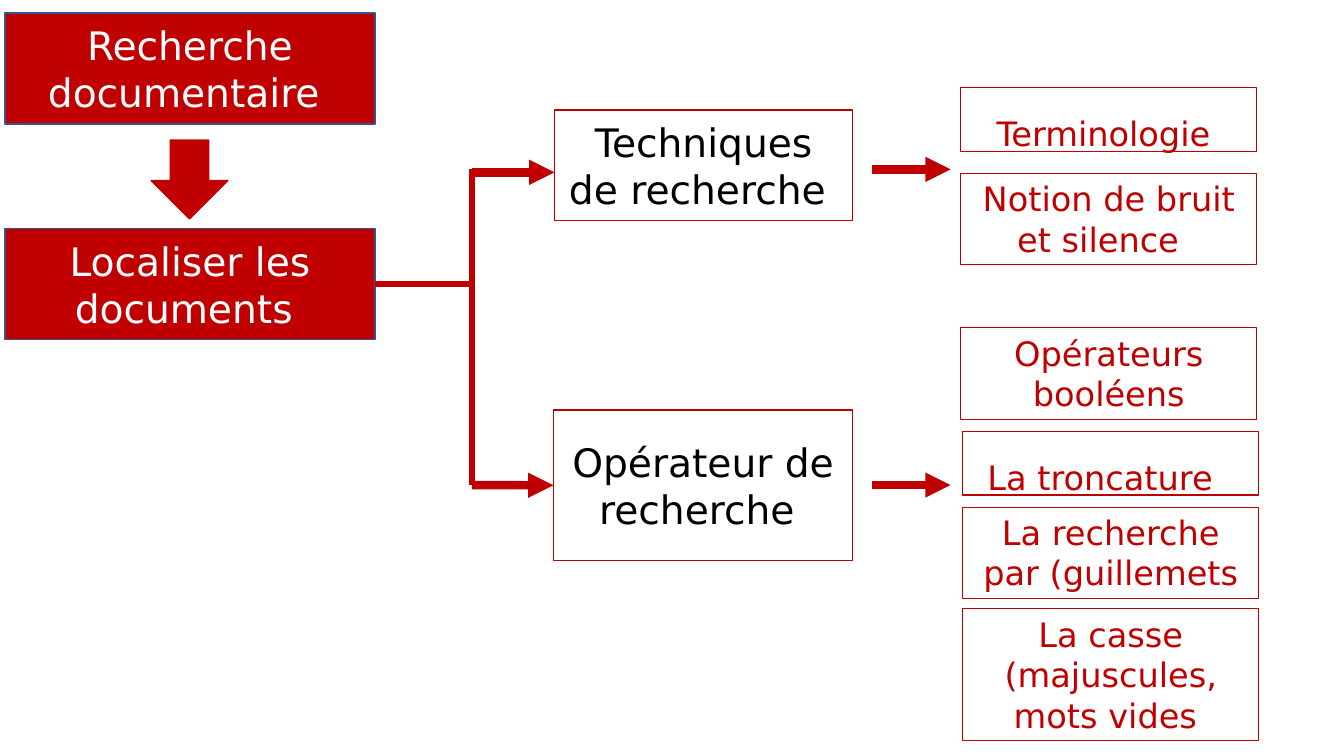
import lxml.etree
import pptx
import pptx.util
import pptx.dml.color
import pptx.enum.shapes
import pptx.enum.text
import pptx.oxml.ns

Pt = pptx.util.Pt
RGBColor = pptx.dml.color.RGBColor
SHAPE = pptx.enum.shapes.MSO_SHAPE
qn = pptx.oxml.ns.qn
RED = RGBColor(0xC0, 0x00, 0x00)
BLUE = RGBColor(0x32, 0x54, 0x91)
WHITE = RGBColor(0xFF, 0xFF, 0xFF)
BLACK = RGBColor(0x00, 0x00, 0x00)
FONT = "DejaVu Sans"

# Content: text, then left, top, width, height in points
STEPS = [
    ("Recherche documentaire ", 3.6, 9.4, 264.2, 79.2),
    ("Localiser les documents ", 3.6, 163.4, 264.2, 79.2),
]
TOPICS = [
    ("Techniques de recherche ", 396, 78.5, 213.1, 79.2),
    ("Opérateur de recherche ", 395.3, 293, 213.8, 107.3),
]
# Details: text, left, top, number of lines
DETAILS = [
    ("Terminologie ", 686.2, 62.6, 1),
    ("Notion de bruit et silence  ", 686.2, 123.8, 2),
    ("Opérateurs booléens", 686.2, 234, 2),
    ("La troncature  ", 687.6, 308.2, 1),
    ("La recherche par (guillemets", 687.6, 362.2, 2),
    ("La casse (majuscules, mots vides ", 687.6, 434.9, 3),
]
DETAIL_WIDTH = 211.7
DETAIL_HEIGHTS = {1: 45.4, 2: 65.5, 3: 94.3}

# Branch layout
TRUNK_X = 337
TRUNK_Y = 203
BRANCH_YS = (123.1, 346.5)
DETAIL_ARROW_YS = (121, 346.5)
DETAIL_ARROW_XS = (622.8, 679)

prs = pptx.Presentation()
prs.slide_width, prs.slide_height = Pt(960), Pt(540)
s = prs.slides.add_slide(prs.slide_layouts[6])


def add_text(sp, text, size, color):
    tf = sp.text_frame
    tf.word_wrap = True
    p = tf.paragraphs[0]
    p.text = text
    p.alignment = pptx.enum.text.PP_ALIGN.CENTER
    p.font.size, p.font.name = Pt(size), FONT
    p.font.color.rgb = color
    return p


def add_block(kind, left, top, width, height, fill, line):
    sp = s.shapes.add_shape(kind, Pt(left), Pt(top), Pt(width), Pt(height))
    sp.shadow.inherit = False
    if fill is None:
        sp.fill.background()
    else:
        sp.fill.solid()
        sp.fill.fore_color.rgb = fill
    sp.line.color.rgb = line
    sp.line.width = Pt(1)
    return sp


def add_box(text, left, top, width, height, fill, line, color):
    sp = add_block(SHAPE.RECTANGLE, left, top, width, height, fill, line)
    sp.text_frame.vertical_anchor = pptx.enum.text.MSO_ANCHOR.MIDDLE
    add_text(sp, text, 28, color)
    return sp


def add_line(x1, y1, x2, y2, width, arrow=False):
    cx = s.shapes.add_connector(pptx.enum.shapes.MSO_CONNECTOR.STRAIGHT,
                                Pt(x1), Pt(y1), Pt(x2), Pt(y2))
    cx.line.color.rgb = RED
    cx.line.width = Pt(width)
    props = cx.element.find(qn("p:spPr"))
    if arrow:
        lxml.etree.SubElement(props.find(qn("a:ln")), qn("a:tailEnd"), type="triangle")
    lxml.etree.SubElement(props, qn("a:effectLst"))
    return cx


# Steps on the left, with the arrow between them
steps = [add_box(*step, RED, BLUE, WHITE) for step in STEPS]
add_block(SHAPE.DOWN_ARROW, 108, 100.1, 54.7, 56.2, RED, RED)

# Topics in the middle
topics = [add_box(*topic, None, RED, BLACK) for topic in TOPICS]

# Details on the right
for text, left, top, lines in DETAILS:
    sp = s.shapes.add_textbox(Pt(left), Pt(top), Pt(DETAIL_WIDTH),
                              Pt(DETAIL_HEIGHTS[lines]))
    sp.line.color.rgb = RED
    sp.line.width = Pt(0.75)
    p = add_text(sp, text, 24, RED)
    if lines == 1:
        p.line_spacing = 1.5

# Branches from the second step to the topics
trunk = add_line(267.8, TRUNK_Y, TRUNK_X, TRUNK_Y, 4.5)
trunk.begin_connect(steps[1], 3)
add_line(TRUNK_X, DETAIL_ARROW_YS[0], TRUNK_X, BRANCH_YS[1], 4.5)
branches = [add_line(TRUNK_X, y, 396, y, 6, arrow=True) for y in BRANCH_YS]
branches[1].end_connect(topics[1], 1)

# Arrows from the topics to the details
for y in DETAIL_ARROW_YS:
    add_line(DETAIL_ARROW_XS[0], y, DETAIL_ARROW_XS[1], y, 6, arrow=True)

prs.save("out.pptx")
